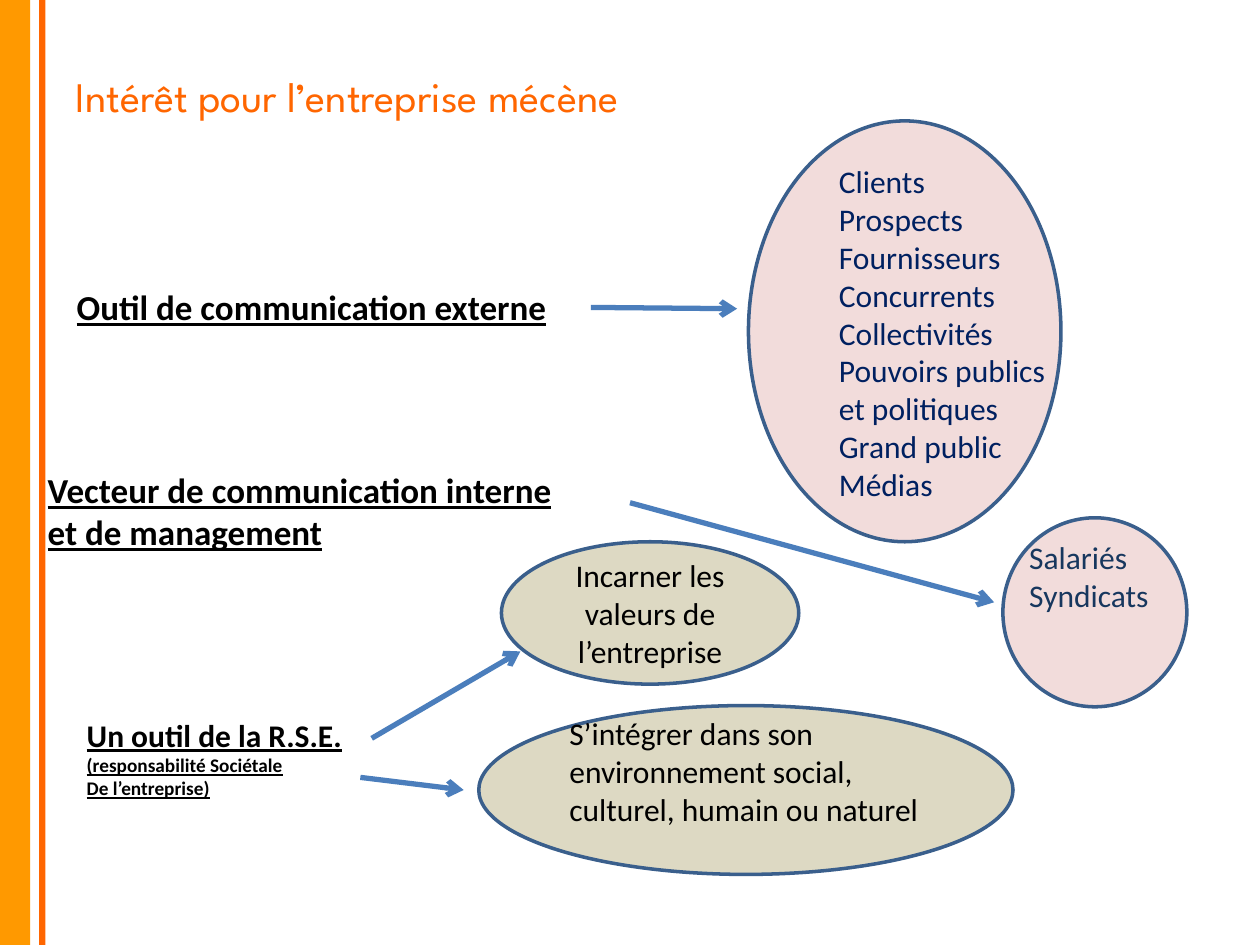
"""Build the slide on what a company gains from being a patron."""
from dataclasses import dataclass

from lxml.etree import SubElement
from pptx import Presentation
from pptx.dml.color import RGBColor
from pptx.enum.shapes import MSO_CONNECTOR, MSO_SHAPE
from pptx.enum.text import MSO_ANCHOR, MSO_AUTO_SIZE, PP_ALIGN
from pptx.oxml.ns import qn
from pptx.util import Inches, Pt

COLORS = {
    "amber": "FF9900",
    "orange": "FF6600",
    "sand": "DDD9C3",
    "rose": "F2DCDB",
    "outline": "3A5F8C",
    "arrow": "4B7EBC",
    "black": "000000",
    "navy": "002060",
    "slate": "17375E",
}


@dataclass(frozen=True)
class Area:
    left: float
    top: float
    width: float
    height: float

    def lengths(self) -> list:
        return [Inches(n) for n in (self.left, self.top, self.width, self.height)]


@dataclass(frozen=True)
class Bubble:
    area: Area
    fill: str
    text: str = ""
    align: PP_ALIGN = PP_ALIGN.LEFT
    bottom_margin: float = 0.05


@dataclass(frozen=True)
class Label:
    area: Area
    lines: tuple
    sizes: tuple
    color: str = "black"
    heading: bool = True


@dataclass(frozen=True)
class Arrow:
    start: tuple
    end: tuple


BANDS = (
    (Area(0, 0, 0.24, 7.5), "amber"),
    (Area(0.31, 0, 0.05, 7.5), "orange"),
)
BUBBLES = (
    Bubble(Area(3.8, 5.6, 4.24, 1.34), "sand",
           "S’intégrer dans son environnement social, culturel, humain ou naturel",
           bottom_margin=0.35),
    Bubble(Area(3.98, 4.3, 2.36, 1.13), "sand",
           "Incarner les valeurs de l’entreprise", PP_ALIGN.CENTER),
    Bubble(Area(7.96, 4.11, 1.46, 1.5), "rose"),
    Bubble(Area(5.94, 0.96, 2.48, 3.34), "rose"),
)
LABELS = (
    Label(Area(0.28, 3.67, 4.41, 1.11),
          ("Vecteur de communication interne", "et de management"), (20, 20)),
    Label(Area(0.51, 2.22, 4.17, 0.44), ("Outil de communication externe",), (20,)),
    Label(Area(0.59, 5.63, 2.27, 1.08),
          ("Un outil de la R.S.E.", "(responsabilité Sociétale", "De l’entreprise)"),
          (18, 11, 11)),
    Label(Area(6.56, 1.24, 1.94, 3.13),
          ("Clients", "Prospects", "Fournisseurs Concurrents", "Collectivités",
           "Pouvoirs publics et politiques", "Grand public", "Médias"),
          (18,) * 7, "navy", False),
    Label(Area(8.07, 4.22, 1.34, 0.71), ("Salariés", "Syndicats"),
          (18, 18), "slate", False),
)
ARROWS = (
    Arrow((5, 3.99), (7.89, 4.78)),
    Arrow((2.95, 5.86), (4.13, 5.17)),
    Arrow((2.86, 6.17), (3.68, 6.27)),
    Arrow((4.69, 2.44), (5.85, 2.45)),
)


def rgb(name: str) -> RGBColor:
    return RGBColor.from_string(COLORS[name])


def style_paragraph(paragraph, size: float, color: str, face: str = "Calibri",
                    heading: bool = False) -> None:
    for span in paragraph.runs:
        span.font.name = face
        span.font.size = Pt(size)
        span.font.color.rgb = rgb(color)
        span.font.bold = heading
        span.font.underline = heading


def draw_shape(page, kind: MSO_SHAPE, area: Area, fill: str):
    shape = page.shapes.add_shape(kind, *area.lengths())
    shape.shadow.inherit = False
    shape.fill.solid()
    shape.fill.fore_color.rgb = rgb(fill)
    return shape


def draw_band(page, area: Area, fill: str) -> None:
    draw_shape(page, MSO_SHAPE.RECTANGLE, area, fill).line.fill.background()


def draw_bubble(page, bubble: Bubble) -> None:
    shape = draw_shape(page, MSO_SHAPE.OVAL, bubble.area, bubble.fill)
    shape.line.color.rgb = rgb("outline")
    shape.line.width = Pt(2)
    if bubble.text:
        frame = shape.text_frame
        frame.text = bubble.text
        frame.word_wrap = True
        frame.vertical_anchor = MSO_ANCHOR.MIDDLE
        frame.margin_bottom = Inches(bubble.bottom_margin)
        frame.paragraphs[0].alignment = bubble.align
        style_paragraph(frame.paragraphs[0], 18, "black")


def draw_label(page, label: Label) -> None:
    frame = page.shapes.add_textbox(*label.area.lengths()).text_frame
    frame.word_wrap = True
    frame.text = "\n".join(label.lines)
    for paragraph, size in zip(frame.paragraphs, label.sizes):
        style_paragraph(paragraph, size, label.color, heading=label.heading)


def draw_arrow(page, arrow: Arrow) -> None:
    points = [Inches(n) for n in arrow.start + arrow.end]
    connector = page.shapes.add_connector(MSO_CONNECTOR.STRAIGHT, *points)
    connector.line.color.rgb = rgb("arrow")
    connector.line.width = Pt(3)
    SubElement(connector.line._get_or_add_ln(), qn("a:tailEnd"), type="arrow")
    SubElement(connector._element.spPr, qn("a:effectLst"))


def set_title(page, text: str) -> None:
    title = page.shapes.title
    title.left, title.top, title.width, title.height = Area(0.5, 0.3, 9, 1.25).lengths()
    frame = title.text_frame
    frame.text = text
    frame.auto_size = MSO_AUTO_SIZE.NONE
    frame.vertical_anchor = MSO_ANCHOR.MIDDLE
    frame.margin_bottom = Inches(0.38)
    frame.paragraphs[0].alignment = PP_ALIGN.LEFT
    style_paragraph(frame.paragraphs[0], 24, "orange", "League Spartan")


def main() -> None:
    deck = Presentation()
    deck.slide_width, deck.slide_height = Inches(10), Inches(7.5)
    page = deck.slides.add_slide(deck.slide_layouts[5])
    set_title(page, "Intérêt pour l’entreprise mécène")
    for area, fill in BANDS:
        draw_band(page, area, fill)
    for bubble in BUBBLES:
        draw_bubble(page, bubble)
    for label in LABELS:
        draw_label(page, label)
    for arrow in ARROWS:
        draw_arrow(page, arrow)
    deck.save("out.pptx")


if __name__ == "__main__":
    main()
